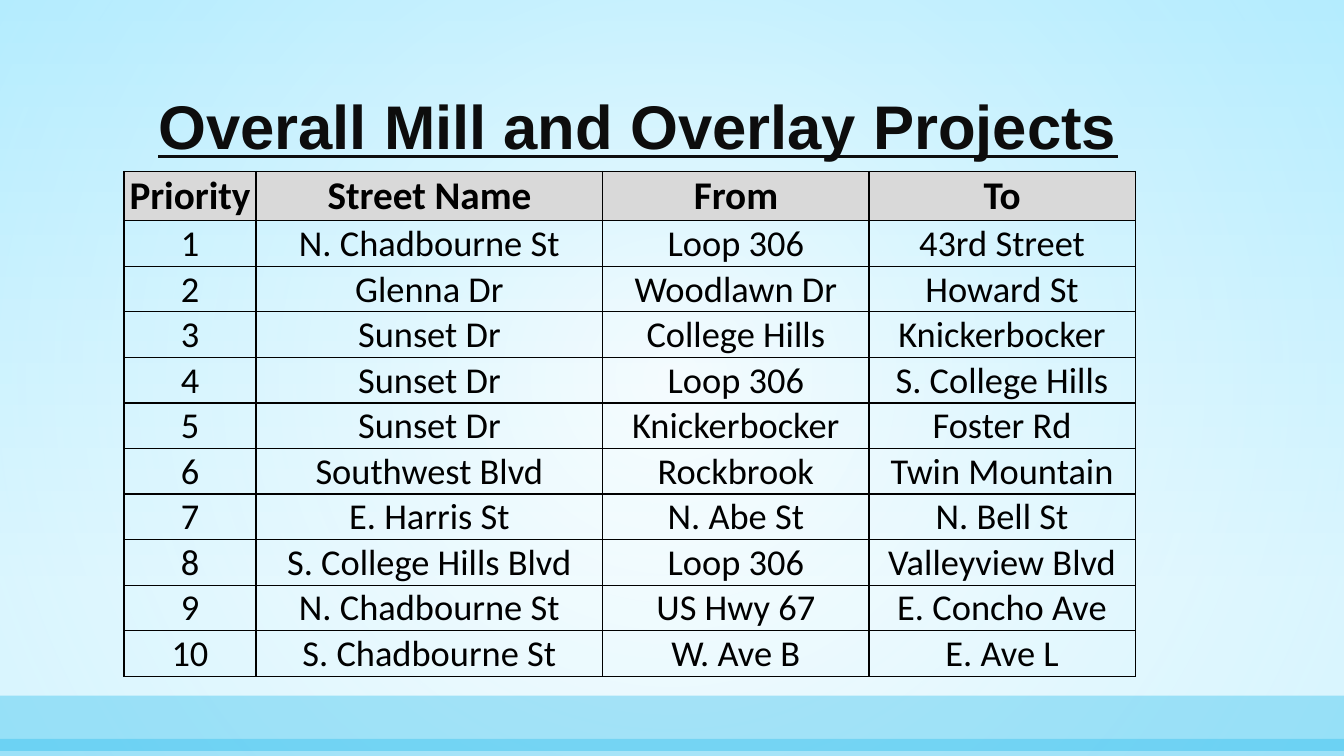
from dataclasses import dataclass

from lxml.etree import SubElement
from pptx import Presentation
from pptx.dml.color import RGBColor
from pptx.enum.shapes import MSO_SHAPE
from pptx.enum.text import MSO_ANCHOR as Anchor, MSO_AUTO_SIZE as AutoSize, PP_ALIGN as Align
from pptx.oxml.ns import qn
from pptx.util import Inches, Pt


@dataclass(frozen=True)
class Theme:
    title_font: str = "Arial"
    table_font: str = "Calibri"
    title_size: int = 44
    header_size: int = 28
    body_size: int = 26
    title_color: str = "0D0D0D"
    ink: str = "000000"
    header_fill: str = "D9D9D9"
    sky: str = "C8F1FF"
    glow_edge: str = "91E4FF"
    band: str = "00B0EA"
    white: str = "FFFFFF"


THEME = Theme()
SLIDE_WIDTH, SLIDE_HEIGHT = 13.33, 7.5
COLUMN_WIDTHS = (1.31, 3.44, 2.64, 2.64)
HEADER_HEIGHT, ROW_HEIGHT = 0.49, 0.45
PROJECTS = (
    ("Priority", "Street Name", "From", "To"),
    ("1", "N. Chadbourne St", "Loop 306", "43rd Street"),
    ("2", "Glenna Dr", "Woodlawn Dr", "Howard St"),
    ("3", "Sunset Dr", "College Hills", "Knickerbocker"),
    ("4", "Sunset Dr", "Loop 306", "S. College Hills"),
    ("5", "Sunset Dr", "Knickerbocker", "Foster Rd"),
    ("6", "Southwest Blvd", "Rockbrook", "Twin Mountain"),
    ("7", "E. Harris St", "N. Abe St", "N. Bell St"),
    ("8", "S. College Hills Blvd", "Loop 306", "Valleyview Blvd"),
    ("9", "N. Chadbourne St", "US Hwy 67", "E. Concho Ave"),
    ("10", "S. Chadbourne St", "W. Ave B", "E. Ave L"),
)


def rgb(color):
    return RGBColor.from_string(color)


def set_gradient(fill, *stops):
    fill.gradient()
    for stop, (position, color) in zip(fill.gradient_stops, stops):
        stop.position = position
        stop.color.rgb = rgb(color)


def set_opacity(shape, *percents):
    colors = shape.element.spPr.iter(qn("a:srgbClr"))
    for color, percent in zip(colors, percents):
        SubElement(color, qn("a:alpha"), val=str(percent * 1000))


def add_rectangle(slide, top, height):
    shape = slide.shapes.add_shape(
        MSO_SHAPE.RECTANGLE, 0, Inches(top), Inches(SLIDE_WIDTH), Inches(height)
    )
    shape.shadow.inherit = False
    shape.line.fill.background()
    return shape


def add_glow(slide):
    shape = add_rectangle(slide, 0, SLIDE_HEIGHT)
    set_gradient(shape.fill, (0, THEME.white), (1, THEME.glow_edge))
    set_opacity(shape, 49, 35)
    gradient = shape.element.spPr.find(qn("a:gradFill"))
    gradient.remove(gradient.find(qn("a:lin")))
    circle = SubElement(gradient, qn("a:path"), path="circle")
    center = dict.fromkeys("ltrb", "50000")
    SubElement(circle, qn("a:fillToRect"), center)


def add_band(slide, top, height, opacity):
    shape = add_rectangle(slide, top, height)
    shape.fill.solid()
    shape.fill.fore_color.rgb = rgb(THEME.band)
    set_opacity(shape, opacity)


def format_title(slide, text):
    title = slide.shapes.title
    title.left, title.top = Inches(1.47), Inches(0.48)
    title.width, title.height = Inches(10.4), Inches(1.19)
    frame = title.text_frame
    frame.text = text
    frame.word_wrap = True
    frame.auto_size = AutoSize.NONE
    frame.vertical_anchor = Anchor.BOTTOM
    paragraph = frame.paragraphs[0]
    paragraph.alignment = Align.LEFT
    paragraph.line_spacing = 0.9
    set_font(paragraph.font, THEME.title_font, THEME.title_size, THEME.title_color, True)
    paragraph.font.underline = True
    slide.shapes.element.append(title.element)


def set_font(font, name, size, color, bold):
    font.name = name
    font.size = Pt(size)
    font.color.rgb = rgb(color)
    font.bold = bold


def add_borders(cell):
    properties = cell._tc.get_or_add_tcPr()
    for index, side in enumerate(("lnL", "lnR", "lnT", "lnB")):
        line = SubElement(properties, qn(f"a:{side}"), w=str(Pt(1)))
        fill = SubElement(line, qn("a:solidFill"))
        SubElement(fill, qn("a:srgbClr"), val=THEME.ink)
        properties.insert(index, line)


def format_cell(cell, text, is_header):
    cell.text = text
    cell.margin_left = cell.margin_right = cell.margin_top = Inches(0.01)
    cell.margin_bottom = 0
    cell.vertical_anchor = Anchor.MIDDLE if is_header else Anchor.BOTTOM
    if is_header:
        cell.fill.solid()
        cell.fill.fore_color.rgb = rgb(THEME.header_fill)
    else:
        cell.fill.background()
    add_borders(cell)
    paragraph = cell.text_frame.paragraphs[0]
    paragraph.alignment = Align.CENTER
    size = THEME.header_size if is_header else THEME.body_size
    set_font(paragraph.font, THEME.table_font, size, THEME.ink, is_header)


def add_project_table(slide):
    height = HEADER_HEIGHT + ROW_HEIGHT * (len(PROJECTS) - 1)
    table = slide.shapes.add_table(
        len(PROJECTS), len(COLUMN_WIDTHS), Inches(1.23), Inches(1.7),
        Inches(sum(COLUMN_WIDTHS)), Inches(height),
    ).table
    table.horz_banding = False
    for column, width in zip(table.columns, COLUMN_WIDTHS):
        column.width = Inches(width)
    for index, (row, values) in enumerate(zip(table.rows, PROJECTS)):
        is_header = index == 0
        row.height = Inches(HEADER_HEIGHT if is_header else ROW_HEIGHT)
        for cell, text in zip(row.cells, values):
            format_cell(cell, text, is_header)


def main():
    presentation = Presentation()
    presentation.slide_width = Inches(SLIDE_WIDTH)
    presentation.slide_height = Inches(SLIDE_HEIGHT)
    slide = presentation.slides.add_slide(presentation.slide_layouts[5])
    background = slide.background.fill
    set_gradient(background, (0, THEME.sky), (0.79, THEME.white))
    background.gradient_angle = 270
    add_glow(slide)
    add_band(slide, 6.9, 0.55, 30)
    add_band(slide, 7.33, 0.17, 28)
    format_title(slide, "Overall Mill and Overlay Projects")
    add_project_table(slide)
    presentation.save("out.pptx")


if __name__ == "__main__":
    main()
